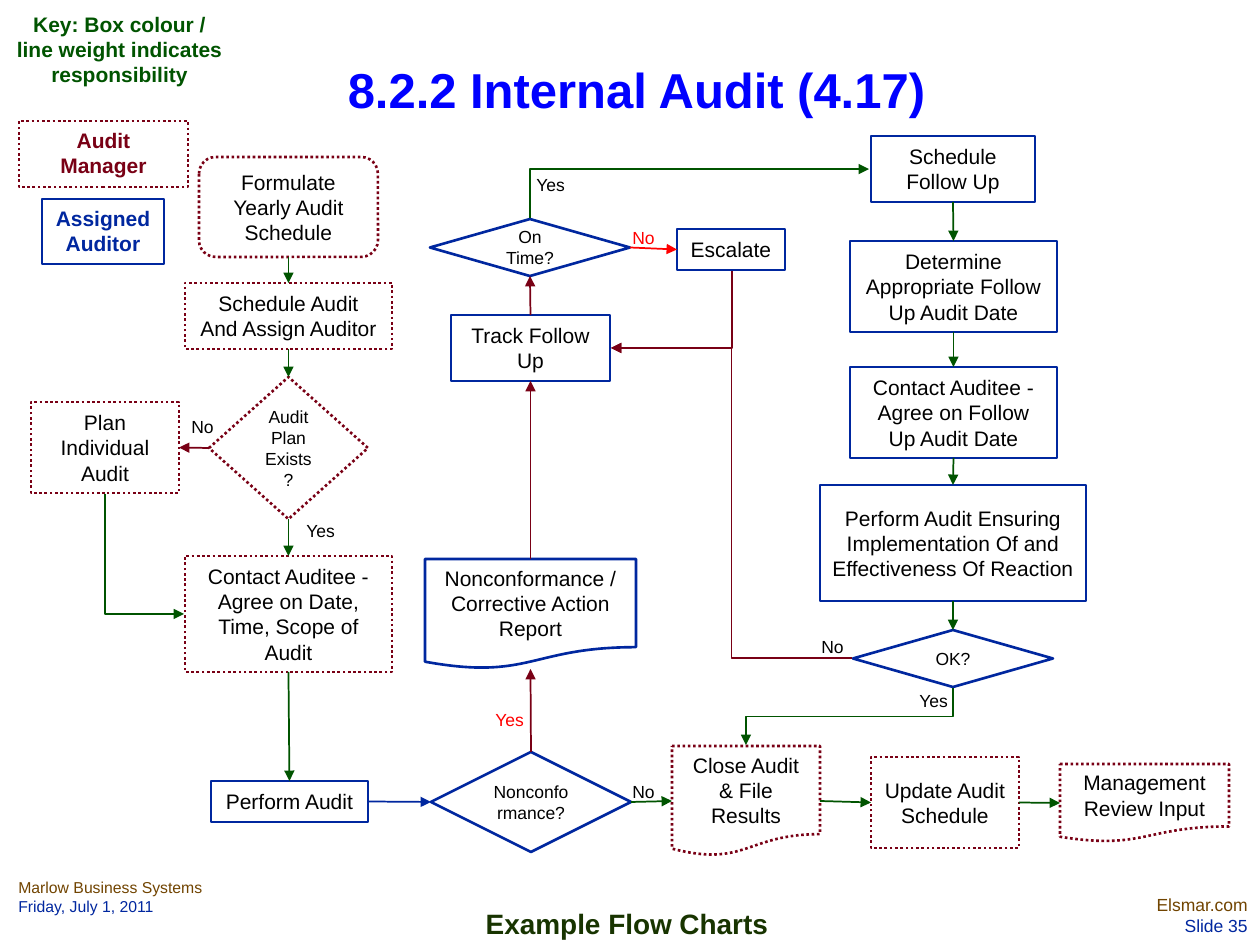
from dataclasses import dataclass

from lxml import etree
from pptx import Presentation
from pptx.dml.color import RGBColor
from pptx.enum.dml import MSO_LINE
from pptx.enum.shapes import MSO_CONNECTOR, MSO_SHAPE
from pptx.enum.text import MSO_ANCHOR, MSO_AUTO_SIZE, PP_ALIGN
from pptx.oxml.ns import qn
from pptx.util import Pt

EMU_PER_PX = 914400 / 126
BLANK_LAYOUT = 6
RECT = MSO_SHAPE.RECTANGLE
ROUNDED = MSO_SHAPE.ROUNDED_RECTANGLE
DIAMOND = MSO_SHAPE.DIAMOND
DECISION = MSO_SHAPE.FLOWCHART_DECISION
DOCUMENT = MSO_SHAPE.FLOWCHART_DOCUMENT
STRAIGHT, ELBOW = MSO_CONNECTOR.STRAIGHT, MSO_CONNECTOR.ELBOW
DOTTED = MSO_LINE.ROUND_DOT
LEFT, CENTER, RIGHT = PP_ALIGN.LEFT, PP_ALIGN.CENTER, PP_ALIGN.RIGHT
TOP, MIDDLE = MSO_ANCHOR.TOP, MSO_ANCHOR.MIDDLE
FIT = MSO_AUTO_SIZE.SHAPE_TO_FIT_TEXT
# Connection sites shared by all the box shapes
SITE_TOP, SITE_LEFT, SITE_BOTTOM, SITE_RIGHT = range(4)
DOWN = (SITE_BOTTOM, SITE_TOP)
UP = (SITE_TOP, SITE_BOTTOM)
ACROSS = (SITE_RIGHT, SITE_LEFT)
BACK = (SITE_LEFT, SITE_RIGHT)


@dataclass(frozen=True)
class Theme:
    font: str = "Arial"
    ink: str = "000000"
    manager: str = "790015"
    auditor: str = "00279F"
    flow: str = "005400"
    alert: str = "FF0000"
    title: str = "0000FF"
    brown: str = "714400"
    dark_green: str = "183400"
    title_size: int = 28
    caption_size: int = 16
    body_size: int = 12
    small_size: int = 10
    footer_size: int = 9
    box_line: float = 1.5
    thin_line: float = 1


def px(length):
    return round(length * EMU_PER_PX)


class FlowSlide:
    def __init__(self, deck, theme):
        self.theme = theme
        self.page = deck.slides.add_slide(deck.slide_layouts[BLANK_LAYOUT])

    def set_text(self, shape, text, size, colors, bold=False, align=CENTER,
                 anchor=TOP, wrap=True):
        """Fill a shape with text; colors holds one per paragraph, or one for all."""
        frame = shape.text_frame
        frame.text = text
        frame.word_wrap = wrap
        frame.auto_size = FIT
        frame.vertical_anchor = anchor
        for index, para in enumerate(frame.paragraphs):
            para.alignment = align
            for span in para.runs:
                span.font.name = self.theme.font
                span.font.size = Pt(size)
                span.font.bold = bold
                color = colors[min(index, len(colors) - 1)]
                span.font.color.rgb = RGBColor.from_string(color)

    def text(self, area, text, size, *colors, **style):
        box = self.page.shapes.add_textbox(*map(px, area))
        self.set_text(box, text, size, colors, **style)

    def label(self, left, top, text, color=None):
        width = 55 if text == "Yes" else 48
        self.text((left, top, width, 34), text, self.theme.small_size,
                  color or self.theme.ink, align=LEFT, wrap=False)

    def box(self, kind, area, text, owner, key=False, weight=None, wrap=True):
        """Draw a step in its owner's line style; key boxes also colour the text."""
        theme = self.theme
        shape = self.page.shapes.add_shape(kind, *map(px, area))
        shape.shadow.inherit = False
        shape.fill.background()
        shape.line.color.rgb = RGBColor.from_string(owner)
        shape.line.width = Pt(weight or theme.box_line)
        if owner == theme.manager:
            shape.line.dash_style = DOTTED
        size = theme.small_size if kind in (DIAMOND, DECISION) else theme.body_size
        self.set_text(shape, text, size, [owner if key else theme.ink], bold=key,
                      anchor=TOP if key else MIDDLE, wrap=wrap)
        return shape

    def connector(self, kind, start, end, color):
        line = self.page.shapes.add_connector(kind, *map(px, start + end))
        line.line.color.rgb = RGBColor.from_string(color)
        line.line.width = Pt(self.theme.thin_line)
        properties = line.element.spPr
        etree.SubElement(properties.find(qn("a:ln")), qn("a:tailEnd"), type="triangle")
        etree.SubElement(properties, qn("a:effectLst"))
        return line

    def arrow(self, source, target, sites=DOWN, color=None):
        line = self.connector(STRAIGHT, (0, 0), (0, 0), color or self.theme.flow)
        line.begin_connect(source, sites[0])
        line.end_connect(target, sites[1])

    def vertical_elbow(self, start, end, color, preset="bentConnector2"):
        """Draw an elbow that leaves its start vertically."""
        line = self.connector(ELBOW, start, end, color)
        run, rise = end[0] - start[0], end[1] - start[1]
        width, height = abs(rise), abs(run)
        line.left = px((start[0] + end[0] - width) / 2)
        line.top = px((start[1] + end[1] - height) / 2)
        line.width, line.height = px(width), px(height)
        frame = line.element.spPr.find(qn("a:xfrm"))
        frame.set("rot", str((90 if run < 0 else 270) * 60000))
        frame.set("flipH", str(int((run < 0) != (rise > 0))))
        frame.set("flipV", "0")
        line.element.spPr.find(qn("a:prstGeom")).set("prst", preset)


def draw_frame(slide, theme):
    """Add the footer, the title and the colour key."""
    slide.text((6, 872, 340, 50), "Marlow Business Systems\nFriday, July 1, 2011",
               theme.footer_size, theme.brown, theme.auditor, align=LEFT)
    slide.text((976, 888, 284, 54), "Elsmar.com\nSlide 35",
               theme.small_size, theme.brown, theme.auditor, align=RIGHT)
    slide.text((307, 900, 640, 45), "Example Flow Charts",
               theme.caption_size, theme.dark_green, bold=True)
    slide.text((334, 53, 605, 71), "8.2.2 Internal Audit (4.17)",
               theme.title_size, theme.title, bold=True, wrap=False)
    slide.text((4, 5, 231, 88), "Key: Box colour / line weight indicates responsibility",
               theme.body_size, theme.flow, bold=True)
    slide.box(RECT, (19, 121, 169, 66), "Audit\nManager", theme.manager, key=True)
    slide.box(RECT, (42, 199, 122, 65), "Assigned\nAuditor", theme.auditor,
              key=True, weight=theme.thin_line, wrap=False)


def draw_flow(slide, theme):
    manager, auditor = theme.manager, theme.auditor
    formulate = slide.box(ROUNDED, (199, 157, 179, 100),
                          "Formulate Yearly Audit Schedule", manager)
    schedule = slide.box(RECT, (185, 283, 207, 66),
                         "Schedule Audit\nAnd Assign Auditor", manager, wrap=False)
    plan_exists = slide.box(DIAMOND, (209, 377, 159, 142), "Audit Plan Exists?", manager)
    plan = slide.box(RECT, (31, 402, 148, 91), "Plan Individual Audit", manager)
    contact = slide.box(RECT, (185, 556, 207, 116),
                        "Contact Auditee - Agree on Date, Time, Scope of Audit", manager)
    perform = slide.box(RECT, (211, 781, 157, 41), "Perform Audit", auditor, wrap=False)
    report = slide.box(DOCUMENT, (425, 559, 211, 110),
                       "Nonconformance / Corrective Action Report", auditor)
    nonconformance = slide.box(DECISION, (431, 752, 200, 100), "Nonconformance?", auditor)
    close = slide.box(DOCUMENT, (672, 746, 148, 110), "Close Audit & File Results", manager)
    update = slide.box(RECT, (871, 757, 148, 91), "Update Audit Schedule", manager)
    review = slide.box(DOCUMENT, (1060, 764, 169, 78), "Management Review Input", manager)
    track = slide.box(RECT, (451, 315, 159, 66), "Track Follow Up", auditor)
    on_time = slide.box(DECISION, (430, 219, 200, 57), "On Time?", auditor)
    escalate = slide.box(RECT, (677, 229, 108, 41), "Escalate", auditor, wrap=False)
    follow_up = slide.box(RECT, (871, 136, 164, 66), "Schedule Follow Up", auditor)
    date = slide.box(RECT, (850, 241, 207, 91),
                     "Determine Appropriate Follow Up Audit Date", auditor)
    agree = slide.box(RECT, (850, 367, 207, 91),
                      "Contact Auditee - Agree on Follow Up Audit Date", auditor)
    verify = slide.box(
        RECT, (820, 485, 266, 116),
        "Perform Audit Ensuring Implementation Of and Effectiveness Of Reaction", auditor)
    accepted = slide.box(DECISION, (853, 630, 200, 57), "OK?", auditor)

    for chain in ((formulate, schedule, plan_exists, contact, perform),
                  (follow_up, date, agree, verify, accepted)):
        for source, target in zip(chain, chain[1:]):
            slide.arrow(source, target)
    closing = (nonconformance, close, update, review)
    for source, target in zip(closing, closing[1:]):
        slide.arrow(source, target, ACROSS)
    reaction = (nonconformance, report, track, on_time)
    for source, target in zip(reaction, reaction[1:]):
        slide.arrow(source, target, UP, manager)
    slide.arrow(plan_exists, plan, BACK, manager)
    slide.arrow(perform, nonconformance, ACROSS, auditor)
    slide.arrow(on_time, escalate, ACROSS, theme.alert)

    slide.vertical_elbow((105, 494), (184, 614), theme.flow)
    slide.vertical_elbow((732, 271), (611, 348), manager)
    slide.vertical_elbow((530, 218), (869, 169), theme.flow)
    slide.vertical_elbow((953, 688), (746, 745), theme.flow, "bentConnector3")
    slide.connector(ELBOW, (852, 658), (611, 348), manager)

    for left, top, text in ((294, 514, "Yes"), (907, 684, "Yes"), (524, 168, "Yes"),
                            (179, 410, "No"), (809, 630, "No"), (620, 775, "No")):
        slide.label(left, top, text)
    slide.label(483, 703, "Yes", theme.alert)
    slide.label(620, 221, "No", theme.alert)


def main():
    deck = Presentation()
    deck.slide_width, deck.slide_height = px(1260), px(945)
    theme = Theme()
    slide = FlowSlide(deck, theme)
    draw_frame(slide, theme)
    draw_flow(slide, theme)
    deck.save("out.pptx")


if __name__ == "__main__":
    main()
